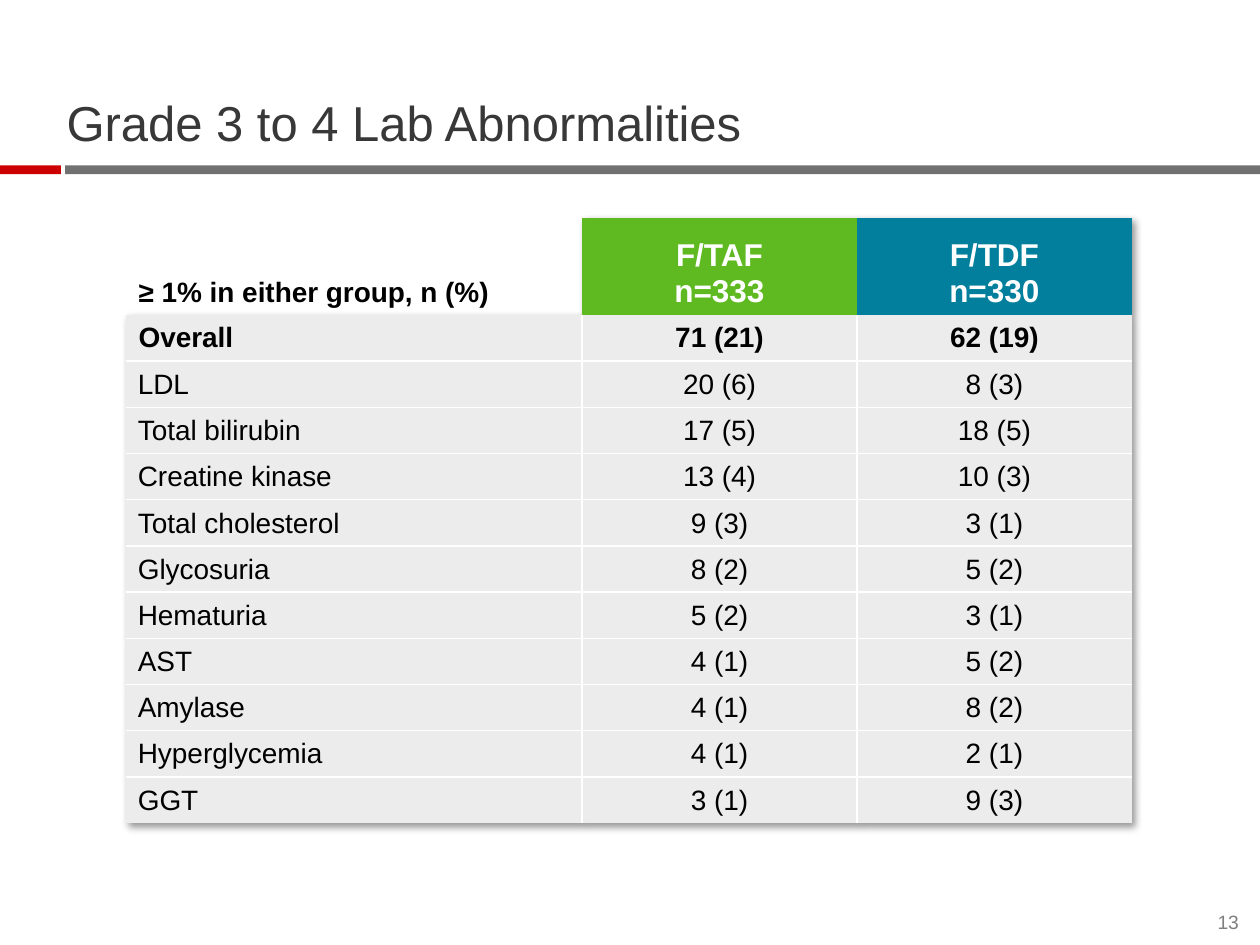
from lxml.etree import SubElement
from pptx import Presentation
from pptx.dml.color import RGBColor
from pptx.enum.shapes import MSO_SHAPE
from pptx.enum.text import MSO_ANCHOR, PP_ALIGN
from pptx.oxml import parse_xml
from pptx.oxml.ns import nsdecls, qn
from pptx.util import Pt

FONT = "Arial"
WHITE = RGBColor(0xFF, 0xFF, 0xFF)
BLACK = RGBColor(0x00, 0x00, 0x00)
TITLE_GRAY = RGBColor(0x38, 0x38, 0x38)
RULE_GRAY = RGBColor(0x71, 0x71, 0x71)
NUMBER_GRAY = RGBColor(0x7F, 0x7F, 0x7F)
RED = RGBColor(0xCC, 0x00, 0x00)
GREEN = RGBColor(0x5E, 0xBA, 0x20)
TEAL = RGBColor(0x02, 0x7F, 0x9C)
CELL_GRAY = RGBColor(0xEC, 0xEC, 0xEC)

NO_STYLE = "{2D5ABB26-0587-4C30-8999-92F81FD0307C}"
COLUMN_WIDTHS = (260.6, 157.1, 157.1)
HEADER_HEIGHT = 55.4
ROW_HEIGHT = 26.4
HEADER_FILLS = (None, GREEN, TEAL)
HEADER_MARGINS = ((7.2, 3.6, 7.2, 3.6), (0, 3.6, 0, 3.6), (0, 3.6, 0, 3.6))
OVERALL_MARGINS = (7.2, 3.6, 7.2, 3.6)
LABEL_MARGINS = (6.8, 0.7, 0.7, 0)
VALUE_MARGINS = (0.7, 0.7, 0.7, 0)

ROWS = (
    ("≥ 1% in either group, n (%)", "F/TAF\vn=333", "F/TDF\nn=330"),
    ("Overall", "71 (21)", "62 (19)"),
    ("LDL", "20 (6)", "8 (3)"),
    ("Total bilirubin", "17 (5)", "18 (5)"),
    ("Creatine kinase", "13 (4)", "10 (3)"),
    ("Total cholesterol", "9 (3)", "3 (1)"),
    ("Glycosuria", "8 (2)", "5 (2)"),
    ("Hematuria", "5 (2)", "3 (1)"),
    ("AST", "4 (1)", "5 (2)"),
    ("Amylase", "4 (1)", "8 (2)"),
    ("Hyperglycemia", "4 (1)", "2 (1)"),
    ("GGT", "3 (1)", "9 (3)"),
)


def set_font(paragraph, size, color, bold=False):
    font = paragraph.font
    font.name, font.size, font.bold = FONT, Pt(size), bold
    font.color.rgb = color


def set_margins(frame, margins):
    """Set left, top, right and bottom margins of a text frame or cell."""
    (frame.margin_left, frame.margin_top,
     frame.margin_right, frame.margin_bottom) = map(Pt, margins)


def add_bar(page, left, width, color):
    bar = page.shapes.add_shape(MSO_SHAPE.RECTANGLE, Pt(left), Pt(94.5), Pt(width), Pt(5))
    bar.shadow.inherit = False
    bar.fill.solid()
    bar.fill.fore_color.rgb = color
    bar.line.fill.background()


def format_title(page, text):
    title = page.shapes.title
    title.left, title.top, title.width, title.height = Pt(38), Pt(34), Pt(648), Pt(53)
    frame = title.text_frame
    frame.text = text
    frame.vertical_anchor = MSO_ANCHOR.BOTTOM
    set_margins(frame, (0, 0, 0, 0))
    paragraph = frame.paragraphs[0]
    paragraph.alignment = PP_ALIGN.LEFT
    paragraph.line_spacing = 0.9
    set_font(paragraph, 28, TITLE_GRAY)


def add_page_number(page, text):
    box = page.shapes.add_textbox(Pt(688.5), Pt(520.5), Pt(19.5), Pt(13))
    frame = box.text_frame
    frame.text = text
    frame.word_wrap = True
    frame.vertical_anchor = MSO_ANCHOR.BOTTOM
    set_margins(frame, (0, 0, 0, 0))
    frame.paragraphs[0].alignment = PP_ALIGN.RIGHT
    set_font(frame.paragraphs[0], 11, NUMBER_GRAY)


def set_borders(cell, sides):
    """Draw white borders on the named sides (L, R, T, B) and none elsewhere."""
    properties = cell._tc.get_or_add_tcPr()
    for index, side in enumerate("LRTB"):
        line = SubElement(properties, qn(f"a:ln{side}"), w=str(Pt(1)))
        if side in sides:
            fill = SubElement(line, qn("a:solidFill"))
            SubElement(fill, qn("a:srgbClr"), val=str(WHITE))
        else:
            SubElement(line, qn("a:noFill"))
        properties.insert(index, line)


def inner_sides(row, column):
    """Name the sides that a body cell shares with other body cells."""
    shared = {"L": column > 0, "R": column < len(COLUMN_WIDTHS) - 1,
              "T": row > 1, "B": row < len(ROWS) - 1}
    return [side for side, is_shared in shared.items() if is_shared]


def format_cell(cell, row, column):
    is_header = row == 0
    fill = HEADER_FILLS[column] if is_header else CELL_GRAY
    if fill is None:
        cell.fill.background()
    else:
        cell.fill.solid()
        cell.fill.fore_color.rgb = fill
    if is_header:
        margins = HEADER_MARGINS[column]
    elif row == 1:
        margins = OVERALL_MARGINS
    else:
        margins = VALUE_MARGINS if column else LABEL_MARGINS
    set_margins(cell, margins)
    cell.vertical_anchor = MSO_ANCHOR.BOTTOM if is_header else MSO_ANCHOR.MIDDLE
    set_borders(cell, [] if is_header else inner_sides(row, column))
    on_color = is_header and column > 0
    for paragraph in cell.text_frame.paragraphs:
        paragraph.alignment = PP_ALIGN.CENTER if column else PP_ALIGN.LEFT
        set_font(paragraph, 18 if on_color else 16, WHITE if on_color else BLACK, row < 2)


def add_table_shadow(table):
    table._tbl.tblPr.insert(0, parse_xml(
        f'<a:effectLst {nsdecls("a")}>'
        '<a:outerShdw blurRad="50800" dist="38100" dir="2700000" algn="tl" rotWithShape="0">'
        '<a:srgbClr val="000000"><a:alpha val="40000"/></a:srgbClr>'
        '</a:outerShdw></a:effectLst>'))


def add_lab_table(page):
    height = HEADER_HEIGHT + ROW_HEIGHT * (len(ROWS) - 1)
    table = page.shapes.add_table(
        len(ROWS), len(COLUMN_WIDTHS), Pt(72), Pt(124.6),
        Pt(sum(COLUMN_WIDTHS)), Pt(height)).table
    table.horz_banding = False
    table._tbl.tblPr.find(qn("a:tableStyleId")).text = NO_STYLE
    add_table_shadow(table)
    for column, width in zip(table.columns, COLUMN_WIDTHS):
        column.width = Pt(width)
    for row, texts in enumerate(ROWS):
        table.rows[row].height = Pt(ROW_HEIGHT if row else HEADER_HEIGHT)
        for column, text in enumerate(texts):
            cell = table.cell(row, column)
            cell.text = text
            format_cell(cell, row, column)


def main():
    deck = Presentation()
    deck.slide_width, deck.slide_height = Pt(720), Pt(540)
    page = deck.slides.add_slide(deck.slide_layouts[5])
    add_bar(page, 37.3, 682.7, RULE_GRAY)
    add_bar(page, 0, 34.8, RED)
    format_title(page, "Grade 3 to 4 Lab Abnormalities")
    add_lab_table(page)
    add_page_number(page, "13")
    deck.save("out.pptx")


if __name__ == "__main__":
    main()
